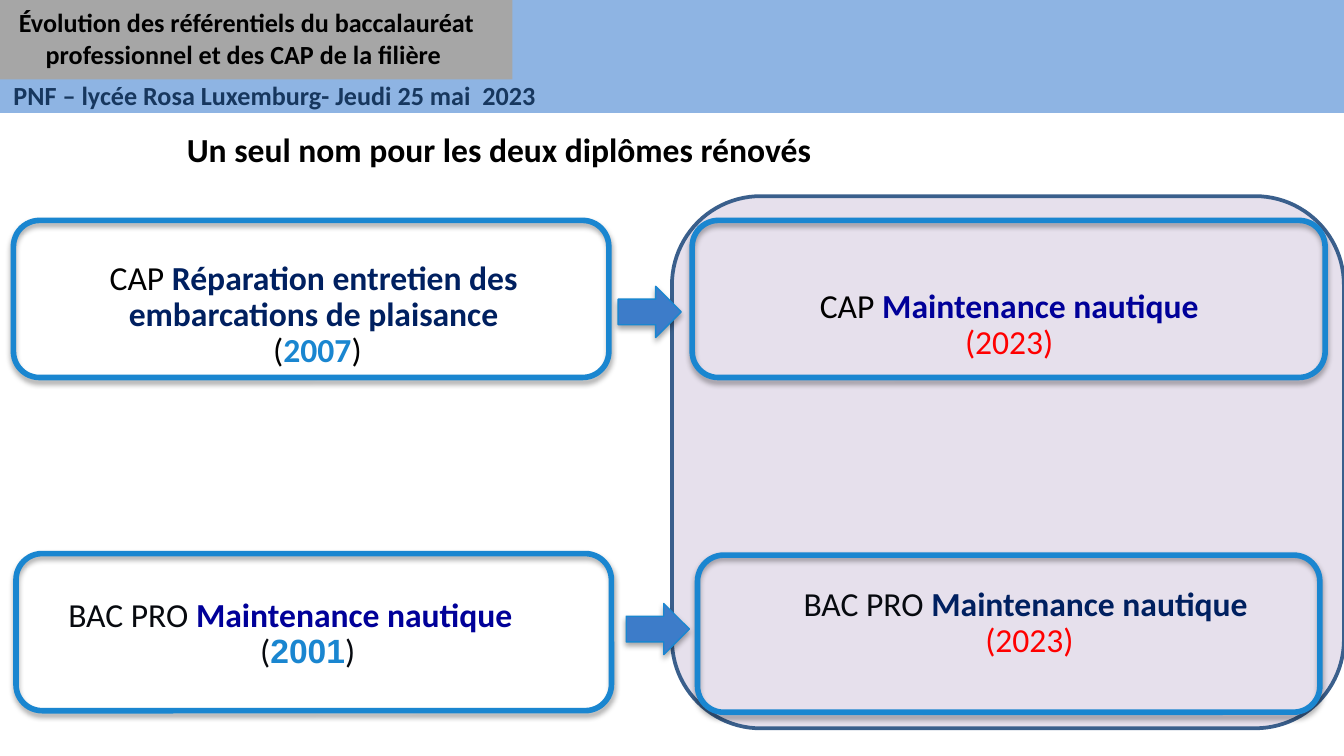
from lxml import etree
from pptx import Presentation
from pptx.dml.color import RGBColor
from pptx.enum.shapes import MSO_SHAPE
from pptx.enum.text import MSO_ANCHOR, MSO_AUTO_SIZE, PP_ALIGN
from pptx.oxml.ns import qn
from pptx.util import Pt

RECTANGLE = MSO_SHAPE.RECTANGLE
ROUNDED = MSO_SHAPE.ROUNDED_RECTANGLE
RIGHT_ARROW = MSO_SHAPE.RIGHT_ARROW
LEFT, CENTER = PP_ALIGN.LEFT, PP_ALIGN.CENTER
TOP = MSO_ANCHOR.TOP
NO_AUTOFIT = MSO_AUTO_SIZE.NONE

BLACK = RGBColor(0x00, 0x00, 0x00)
INK = RGBColor(0x07, 0x0A, 0x0F)
NAVY = RGBColor(0x00, 0x20, 0x60)
ROYAL = RGBColor(0x00, 0x00, 0x99)
RED = RGBColor(0xFF, 0x00, 0x00)
BLUE = RGBColor(0x1A, 0x86, 0xD0)
ARROW_BLUE = RGBColor(0x3D, 0x7C, 0xC9)
BAND_BLUE = RGBColor(0x8E, 0xB4, 0xE3)
DATE_BLUE = RGBColor(0x17, 0x37, 0x5E)
GREY = RGBColor(0xA6, 0xA6, 0xA6)
LILAC = RGBColor(0xE6, 0xE0, 0xEC)
PANEL_LINE = RGBColor(0x3A, 0x5F, 0x8C)

BODY_FONT = "Calibri"
YEAR_FONT = "Arial"
FRAME_HEIGHT = 84.2


def add_shadow(shape):
    """Give the shape a soft black shadow that falls straight down."""
    shape.shadow.inherit = False
    effects = shape._element.spPr.find(qn("a:effectLst"))
    shadow = etree.SubElement(
        effects, qn("a:outerShdw"), blurRad=str(Pt(3.1)), dist=str(Pt(1.8)),
        dir="5400000", rotWithShape="0")
    color = etree.SubElement(shadow, qn("a:srgbClr"), val="000000")
    etree.SubElement(color, qn("a:alpha"), val="35000")


def add_box(slide, kind, left, top, width, height, fill=None, line=None, line_width=1):
    shape = slide.shapes.add_shape(kind, Pt(left), Pt(top), Pt(width), Pt(height))
    shape.shadow.inherit = False
    if fill is None:
        shape.fill.background()
    else:
        shape.fill.solid()
        shape.fill.fore_color.rgb = fill
    if line is None:
        shape.line.fill.background()
    else:
        shape.line.color.rgb = line
        shape.line.width = Pt(line_width)
    return shape


def add_frame(slide, left, top, width):
    add_shadow(add_box(slide, ROUNDED, left, top, width, FRAME_HEIGHT, line=BLUE, line_width=3))


def add_arrow(slide, left, top):
    add_shadow(add_box(slide, RIGHT_ARROW, left, top, 33.8, 27.4, ARROW_BLUE, BLUE, 0.75))


def format_run(run, size, color, bold, font=BODY_FONT):
    run.font.name = font
    run.font.size = Pt(size)
    run.font.color.rgb = color
    run.font.bold = bold


def add_text(slide, left, top, width, height, lines, size=18, spacing=0.9):
    """Add centred lines, each a list of (text, color, bold[, font]) runs."""
    box = slide.shapes.add_textbox(Pt(left), Pt(top), Pt(width), Pt(height))
    text_frame = box.text_frame
    text_frame.word_wrap = True
    for index, line in enumerate(lines):
        paragraph = text_frame.add_paragraph() if index else text_frame.paragraphs[0]
        paragraph.alignment = CENTER
        paragraph.line_spacing = spacing
        for text, *style in line:
            run = paragraph.add_run()
            run.text = text
            format_run(run, size, *style)
    return box


def set_title(slide, text):
    title = slide.shapes.title
    title.left, title.top, title.width, title.height = Pt(92.9), Pt(65.5), Pt(448.6), Pt(28.8)
    text_frame = title.text_frame
    text_frame.text = text
    text_frame.auto_size = NO_AUTOFIT
    text_frame.vertical_anchor = TOP
    paragraph = text_frame.paragraphs[0]
    paragraph.alignment = LEFT
    format_run(paragraph.runs[0], 18, BLACK, True)


def add_header(slide):
    add_box(slide, RECTANGLE, 0, 0, 720, 60.5, BAND_BLUE)
    add_box(slide, RECTANGLE, 0, 0, 274.5, 42.5, GREY)
    add_text(slide, -36, 39, 366.5, 24.5,
             [[("PNF – lycée Rosa Luxemburg- Jeudi 25 mai  2023", DATE_BLUE, True)]], 14, 1)
    add_text(slide, 0, 0, 264.2, 41,
             [[("Évolution des référentiels du baccalauréat professionnel "
                "et des CAP de la filière ", BLACK, True)]], 14, 1)


def add_cap_row(slide):
    add_text(slide, 14.4, 136.4, 307.4, 66, [
        [("CAP ", BLACK, False), ("Réparation entretien des", NAVY, True)],
        [("embarcations de plaisance", NAVY, True)],
        [(" (", BLACK, False), ("2007", BLUE, True), (")", BLACK, False)],
    ])
    add_frame(slide, 7.2, 118.1, 319)
    add_text(slide, 374.4, 151.6, 332.6, 47, [
        [("CAP ", BLACK, False), ("Maintenance nautique", ROYAL, True)],
        [("(2023)", RED, False)],
    ])
    add_frame(slide, 370.8, 118.1, 339.1)
    add_arrow(slide, 331.2, 153.4)


def add_bac_pro_row(slide):
    old_name = add_text(slide, 29.5, 314.6, 270.7, 49, [
        [("BAC PRO ", INK, False), ("Maintenance nautique", ROYAL, True)],
        [("(", INK, False), ("2001", BLUE, True, YEAR_FONT), (")", INK, False)],
    ])
    first = old_name.text_frame.paragraphs[0]
    first.alignment = LEFT
    first.line_spacing = 1
    add_text(slide, 365.8, 311, 371.5, 46.8, [
        [("BAC PRO ", INK, False), ("Maintenance nautique ", NAVY, True)],
        [("(2023)", RED, False)],
    ])
    add_frame(slide, 8.6, 296.6, 319)
    add_frame(slide, 373.7, 297.4, 333.4)
    add_arrow(slide, 335.5, 323.3)


def main():
    presentation = Presentation()
    presentation.slide_width, presentation.slide_height = Pt(720), Pt(405)
    slide = presentation.slides.add_slide(presentation.slide_layouts[5])
    set_title(slide, "Un seul nom pour les deux diplômes rénovés")
    add_header(slide)
    add_box(slide, ROUNDED, 360, 105.1, 360, 285.1, LILAC, PANEL_LINE, 2)
    add_cap_row(slide)
    add_bac_pro_row(slide)
    presentation.save("out.pptx")


if __name__ == "__main__":
    main()
